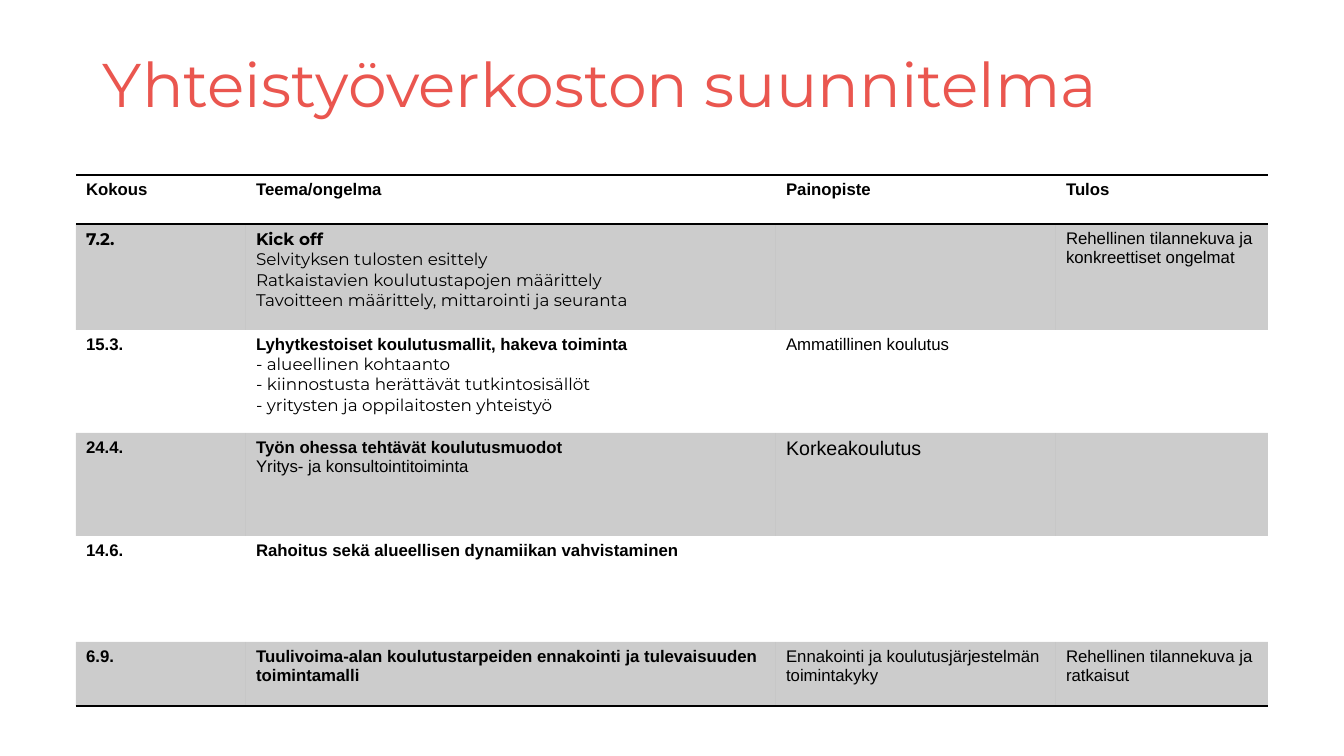
from dataclasses import dataclass

from lxml.etree import SubElement
from pptx import Presentation
from pptx.dml.color import RGBColor
from pptx.enum.text import MSO_ANCHOR
from pptx.oxml.ns import qn
from pptx.util import Emu, Pt

TITLE = "Yhteistyöverkoston suunnitelma"


@dataclass(frozen=True)
class Theme:
    heading_font: str = "Montserrat"
    body_font: str = "Arial"
    accent: str = "EA564F"
    ink: str = "000000"
    band_opacity: int = 20
    title_size: int = 44
    large_size: int = 14
    body_size: int = 12
    rule_width: int = 1


THEME = Theme()
BOLD = {"bold": True}
HEADING = {"font": THEME.heading_font}
LARGE = {"size": THEME.large_size}

# Each cell is a list of (text, format) paragraphs.
ROWS = [
    [[("Kokous", BOLD)], [("Teema/ongelma", BOLD)], [("Painopiste", BOLD)], [("Tulos", BOLD)]],
    [
        [("7.2.", BOLD | HEADING)],
        [
            ("Kick off", BOLD | HEADING),
            ("Selvityksen tulosten esittely", HEADING),
            ("Ratkaistavien koulutustapojen määrittely", HEADING),
            ("Tavoitteen määrittely, mittarointi ja seuranta", HEADING),
        ],
        [],
        [("Rehellinen tilannekuva ja konkreettiset ongelmat", {})],
    ],
    [
        [("15.3.", BOLD)],
        [
            ("Lyhytkestoiset koulutusmallit, hakeva toiminta", BOLD),
            ("- alueellinen kohtaanto", HEADING),
            ("- kiinnostusta herättävät tutkintosisällöt", HEADING),
            ("- yritysten ja oppilaitosten yhteistyö", HEADING),
        ],
        [("Ammatillinen koulutus", {})],
        [],
    ],
    [
        [("24.4.", BOLD)],
        [("Työn ohessa tehtävät koulutusmuodot", BOLD), ("Yritys- ja konsultointitoiminta", {})],
        [("Korkeakoulutus", LARGE)],
        [],
    ],
    [[("14.6.", BOLD)], [("Rahoitus sekä alueellisen dynamiikan vahvistaminen", BOLD)], [], []],
    [
        [("6.9.", BOLD)],
        [("Tuulivoima-alan koulutustarpeiden ennakointi ja tulevaisuuden toimintamalli", BOLD)],
        [("Ennakointi ja koulutusjärjestelmän toimintakyky", {})],
        [("Rehellinen tilannekuva ja ratkaisut", {})],
    ],
]

SLIDE_SIZE = (1344, 756)
TITLE_BOX = (93, 15, 1159, 146)
TABLE_ORIGIN = (76, 175)
COLUMN_WIDTHS = [170, 530, 280, 212]
ROW_HEIGHTS = [49, 106, 103, 103, 106, 64]
PLAIN_TABLE_STYLE = "{2D5ABB26-0587-4C30-8999-92F81FD0307C}"


def px(length):
    return Emu(round(length * 914400 / 100.8))


def write(paragraph, text, font=THEME.body_font, size=THEME.body_size, color=THEME.ink, bold=False):
    run = paragraph.add_run()
    run.text = text
    run.font.name = font
    run.font.size = Pt(size)
    run.font.bold = bold
    run.font.color.rgb = RGBColor.from_string(color)


def add_rule(cell, side):
    """Draw a border on one side: "lnT" is the top, "lnB" the bottom."""
    properties = cell._tc.get_or_add_tcPr()
    line = SubElement(properties, qn(f"a:{side}"), w=str(Pt(THEME.rule_width)))
    fill = SubElement(line, qn("a:solidFill"))
    SubElement(fill, qn("a:srgbClr"), val=THEME.ink)


def shade(cell):
    cell.fill.solid()
    cell.fill.fore_color.rgb = RGBColor.from_string(THEME.ink)
    color = cell._tc.tcPr.find(f".//{qn('a:solidFill')}[last()]/{qn('a:srgbClr')}")
    color = cell._tc.tcPr.find(qn("a:solidFill")).find(qn("a:srgbClr"))
    SubElement(color, qn("a:alpha"), val=str(THEME.band_opacity * 1000))


def fill_cell(cell, paragraphs, row_index):
    for index, (text, style) in enumerate(paragraphs):
        paragraph = cell.text_frame.add_paragraph() if index else cell.text_frame.paragraphs[0]
        write(paragraph, text, **style)
    if row_index == 0:
        add_rule(cell, "lnT")
    if row_index in (0, len(ROWS) - 1):
        add_rule(cell, "lnB")
    if row_index % 2:
        shade(cell)
    else:
        cell.fill.background()


def add_title(slide):
    frame = slide.shapes.add_textbox(*map(px, TITLE_BOX)).text_frame
    frame.word_wrap = True
    frame.vertical_anchor = MSO_ANCHOR.MIDDLE
    frame.paragraphs[0].line_spacing = 0.9
    write(frame.paragraphs[0], TITLE, THEME.heading_font, THEME.title_size, THEME.accent)


def add_schedule(slide):
    size = (sum(COLUMN_WIDTHS), sum(ROW_HEIGHTS))
    table = slide.shapes.add_table(
        len(ROWS), len(COLUMN_WIDTHS), *map(px, TABLE_ORIGIN + size)
    ).table
    table._tbl.tblPr.find(qn("a:tableStyleId")).text = PLAIN_TABLE_STYLE
    for column, width in zip(table.columns, COLUMN_WIDTHS):
        column.width = px(width)
    for row_index, (row, height, contents) in enumerate(zip(table.rows, ROW_HEIGHTS, ROWS)):
        row.height = px(height)
        for cell, paragraphs in zip(row.cells, contents):
            fill_cell(cell, paragraphs, row_index)


def main():
    presentation = Presentation()
    presentation.slide_width, presentation.slide_height = map(px, SLIDE_SIZE)
    slide = presentation.slides.add_slide(presentation.slide_layouts[6])
    add_title(slide)
    add_schedule(slide)
    presentation.save("out.pptx")


if __name__ == "__main__":
    main()
